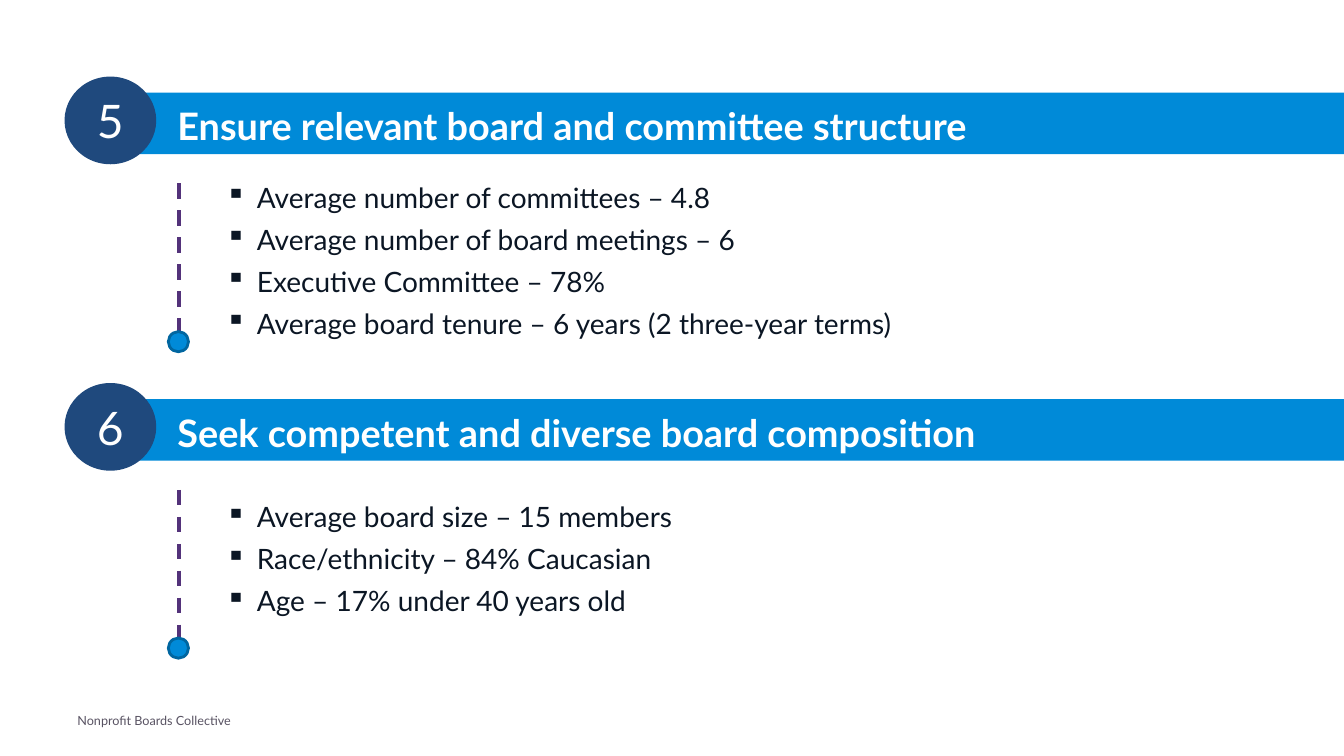
from lxml.etree import SubElement
from pptx import Presentation
from pptx.dml.color import RGBColor
from pptx.enum.dml import MSO_LINE
from pptx.enum.shapes import MSO_CONNECTOR, MSO_SHAPE
from pptx.enum.text import MSO_ANCHOR, PP_ALIGN
from pptx.oxml.ns import qn
from pptx.util import Inches, Pt

WHITE = RGBColor(0xFF, 0xFF, 0xFF)
BLUE = RGBColor(0x00, 0x8A, 0xD8)
EDGE = RGBColor(0x00, 0x66, 0xA0)
NAVY = RGBColor(0x1F, 0x49, 0x7D)
PURPLE = RGBColor(0x53, 0x32, 0x7A)
INK = RGBColor(0x0B, 0x16, 0x24)
GREY = RGBColor(0x58, 0x52, 0x62)

COLS, ROWS = 40, 30
FIRST_ROW, SECTION_ROWS = 3.04, 12.16
SECTIONS = [
    ("5", "Ensure relevant board and committee structure", 3.92, [
        "Average number of committees – 4.8",
        "Average number of board meetings – 6",
        "Executive Committee – 78%",
        "Average board tenure – 6 years (2 three-year terms)",
    ]),
    ("6", "Seek competent and diverse board composition", 4.44, [
        "Average board size – 15 members",
        "Race/ethnicity – 84% Caucasian",
        "Age – 17% under 40 years old",
    ]),
]


class Board:
    """Draws styled elements on one slide, placed by grid columns and rows."""

    font = "Lato"

    def __init__(self, prs):
        """Add a blank slide and measure its grid."""
        self.s = prs.slides.add_slide(prs.slide_layouts[6])
        self.col = prs.slide_width / COLS
        self.row = prs.slide_height / ROWS

    def box(self, x, y, w, h):
        """Turn grid units into lengths."""
        return (round(x * self.col), round(y * self.row),
                round(w * self.col), round(h * self.row))

    def style(self, p, size, color, bold=False):
        """Format the runs of a paragraph."""
        for r in p.runs:
            r.font.name = self.font
            r.font.size = Pt(size)
            r.font.bold = bold
            r.font.color.rgb = color

    def shape(self, kind, x, y, w, h, fill, edge=None):
        """Add a flat filled shape."""
        sp = self.s.shapes.add_shape(kind, *self.box(x, y, w, h))
        sp.shadow.inherit = False
        sp.fill.solid()
        sp.fill.fore_color.rgb = fill
        if edge is None:
            sp.line.fill.background()
        else:
            sp.line.color.rgb = edge
            sp.line.width = Pt(2)
        return sp

    def textbox(self, x, y, w, h):
        """Add a wrapping text box and return its frame."""
        tf = self.s.shapes.add_textbox(*self.box(x, y, w, h)).text_frame
        tf.word_wrap = True
        return tf

    def heading(self, y, text):
        """Add a heading bar that runs to the right edge."""
        sp = self.shape(MSO_SHAPE.RECTANGLE, 3.33, y, COLS - 3.33, 2.44, BLUE)
        tf = sp.text_frame
        tf.text = text
        tf.vertical_anchor = MSO_ANCHOR.TOP
        tf.margin_left, tf.margin_top = Inches(0.65), Inches(0.1)
        p = tf.paragraphs[0]
        p.alignment = PP_ALIGN.LEFT
        self.style(p, 27, WHITE, True)

    def badge(self, y, number):
        """Add a numbered circle."""
        sp = self.shape(MSO_SHAPE.OVAL, 1.92, y, 2.73, 3.48, NAVY)
        tf = sp.text_frame
        tf.text = number
        tf.vertical_anchor = MSO_ANCHOR.MIDDLE
        p = tf.paragraphs[0]
        p.alignment = PP_ALIGN.CENTER
        self.style(p, 33, WHITE)

    def bullets(self, y, items):
        """Add a list with square bullets."""
        tf = self.textbox(6.42, y, 32, 6.8)
        tf.text = "\n".join(items)
        for p in tf.paragraphs:
            pPr = p._p.get_or_add_pPr()
            pPr.set("marL", str(Inches(0.31)))
            pPr.set("indent", str(-Inches(0.31)))
            clr = SubElement(pPr, qn("a:buClr"))
            SubElement(clr, qn("a:srgbClr"), val=str(INK))
            SubElement(pPr, qn("a:buChar"), char="▪")
            p.space_after = Pt(6)
            self.style(p, 20, INK)

    def stem(self, y):
        """Add a dashed stem that ends in a dot."""
        x, top, dx, dy = self.box(5.34, y, 0, 6.68)
        c = self.s.shapes.add_connector(
            MSO_CONNECTOR.STRAIGHT, x, top, x + dx, top + dy)
        c.line.color.rgb = PURPLE
        c.line.width = Pt(2.75)
        c.line.dash_style = MSO_LINE.DASH
        SubElement(c._element.spPr, qn("a:effectLst"))
        self.shape(MSO_SHAPE.OVAL, 5.01, y + 5.88, 0.6, 0.8, BLUE, EDGE)

    def section(self, y, number, title, list_offset, items):
        """Add a numbered section with its list."""
        self.heading(y + 0.64, title)
        self.badge(y, number)
        self.bullets(y + list_offset, items)
        self.stem(y + 4.24)

    def footer(self, text):
        """Add the footer line."""
        tf = self.textbox(2.01, 27.8, 24.33, 1.6)
        tf.text = text
        tf.vertical_anchor = MSO_ANCHOR.MIDDLE
        self.style(tf.paragraphs[0], 9, GREY)


def main():
    """Build and save the slide."""
    prs = Presentation()
    prs.slide_width, prs.slide_height = Inches(13.33), Inches(7.5)
    board = Board(prs)
    for i, section in enumerate(SECTIONS):
        board.section(FIRST_ROW + i * SECTION_ROWS, *section)
    board.footer("Nonprofit Boards Collective")
    prs.save("out.pptx")


if __name__ == "__main__":
    main()
